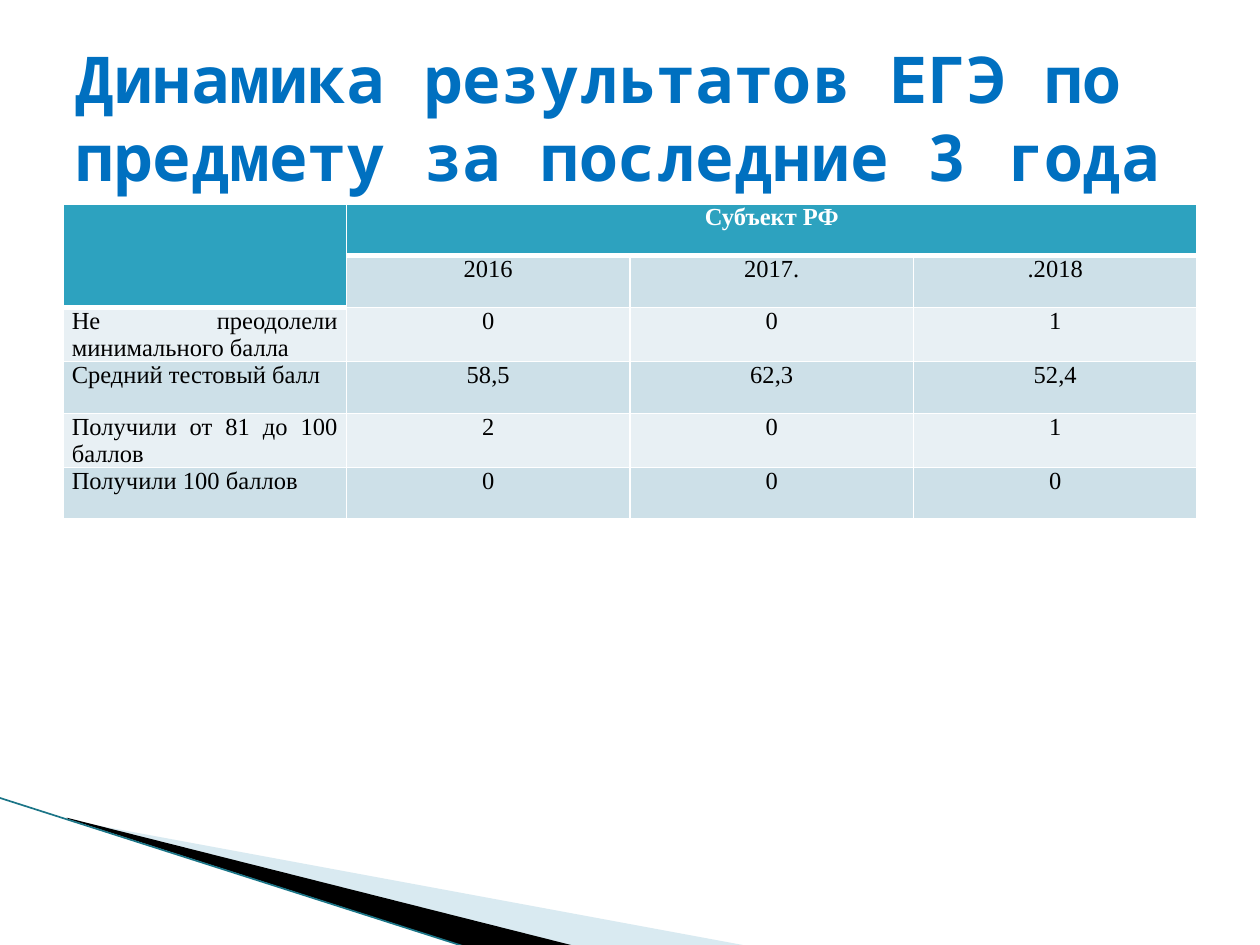
from lxml.etree import SubElement
from pptx import Presentation
from pptx.dml.color import RGBColor
from pptx.enum.text import MSO_ANCHOR as Anchor, PP_ALIGN as Align
from pptx.oxml.ns import qn
from pptx.util import Emu, Inches, Pt

TITLE = "Динамика результатов ЕГЭ по предмету за последние 3 года"
ROWS = [
    ["", "Субъект РФ", "", ""],
    ["", "2016", "2017.", ".2018"],
    ["Не преодолели минимального балла", "0", "0", "1"],
    ["Средний тестовый балл", "58,5", "62,3", "52,4"],
    ["Получили от 81 до 100 баллов", "2", "0", "1"],
    ["Получили 100 баллов", "0", "0", "0"],
]
WEDGES = [
    ("A0CBDC", 40, [(0.55, 6.51), (5.95, 7.51), (4.56, 7.51), (0.55, 6.5)]),
    ("000000", 100, [(0.53, 6.49), (4.57, 7.51), (3.72, 7.52), (0.54, 6.5)]),
]
EDGE = [(-0.01, 6.33), (3.71, 7.52)]
HEADER, BANDS = "2DA2BF", ["E8F0F4", "CDE0E8"]
MARGIN, ROW_HEIGHT = 0.5, 0.41


def colour(hex_text):
    return RGBColor.from_string(hex_text)


def paint(part, hex_text):
    part.fill.solid()
    part.fill.fore_color.rgb = colour(hex_text)


def write(paragraph, text, font_name, size, hex_text, bold):
    run = paragraph.add_run()
    run.text = text
    font = run.font
    font.name, font.size, font.bold = font_name, Pt(size), bold
    font.color.rgb = colour(hex_text)


def add_border(cell, side, points):
    line = SubElement(cell._tc.get_or_add_tcPr(), qn(f"a:ln{side}"), w=str(Pt(points)))
    fill = SubElement(line, qn("a:solidFill"))
    SubElement(fill, qn("a:srgbClr"), val="FFFFFF")


def add_wedge(shapes, hex_text, opacity, points):
    start, *rest = [(Inches(x), Inches(y)) for x, y in points]
    builder = shapes.build_freeform(*start)
    builder.add_line_segments(rest)
    wedge = builder.convert_to_shape()
    wedge.shadow.inherit = False
    wedge.line.fill.background()
    paint(wedge, hex_text)
    if opacity < 100:
        tint = wedge._element.spPr.find(".//" + qn("a:srgbClr"))
        SubElement(tint, qn("a:alpha"), val=str(opacity * 1000))


def add_edge(shapes):
    ends = [Inches(length) for point in EDGE for length in point]
    edge = shapes.add_connector(1, *ends)
    edge.line.color.rgb = colour("1B7587")
    edge.line.width = Pt(0.95)
    SubElement(edge._element.spPr, qn("a:effectLst"))


def add_results(shapes, width):
    columns = len(ROWS[0])
    table = shapes.add_table(
        len(ROWS), columns, Inches(MARGIN), Inches(1.62),
        width, Inches(ROW_HEIGHT * len(ROWS)),
    ).table
    for r, values in enumerate(ROWS):
        for c, value in enumerate(values):
            cell = table.cell(r, c)
            header_end = 1 if c == 0 else 0
            in_header = r <= header_end
            cell.margin_left = cell.margin_right = Inches(0.07)
            cell.margin_top = cell.margin_bottom = 0
            for side in "LR":
                add_border(cell, side, 1)
            add_border(cell, "T", 3 if r == header_end + 1 else 1)
            add_border(cell, "B", 3 if r == header_end else 1)
            paint(cell, HEADER if in_header else BANDS[r % 2])
            paragraph = cell.text_frame.paragraphs[0]
            paragraph.alignment = Align.CENTER if c else Align.JUSTIFY
            if value:
                write(paragraph, value, "Times New Roman", 14,
                      "FFFFFF" if in_header else "000000", in_header)
    table.cell(0, 0).merge(table.cell(1, 0))
    table.cell(0, 1).merge(table.cell(0, columns - 1))


def add_title(shapes, width):
    frame = shapes.add_textbox(Inches(MARGIN), Inches(0.3), width, Inches(1.25)).text_frame
    frame.word_wrap = True
    frame.vertical_anchor = Anchor.MIDDLE
    write(frame.paragraphs[0], TITLE, "Noto Sans Mono", 36.9, "0070C0", True)


def main():
    deck = Presentation()
    deck.slide_width, deck.slide_height = Inches(10), Inches(7.5)
    shapes = deck.slides.add_slide(deck.slide_layouts[6]).shapes
    content_width = Emu(deck.slide_width - 2 * Inches(MARGIN))
    for wedge in WEDGES:
        add_wedge(shapes, *wedge)
    add_edge(shapes)
    add_results(shapes, content_width)
    add_title(shapes, content_width)
    deck.save("out.pptx")


if __name__ == "__main__":
    main()
